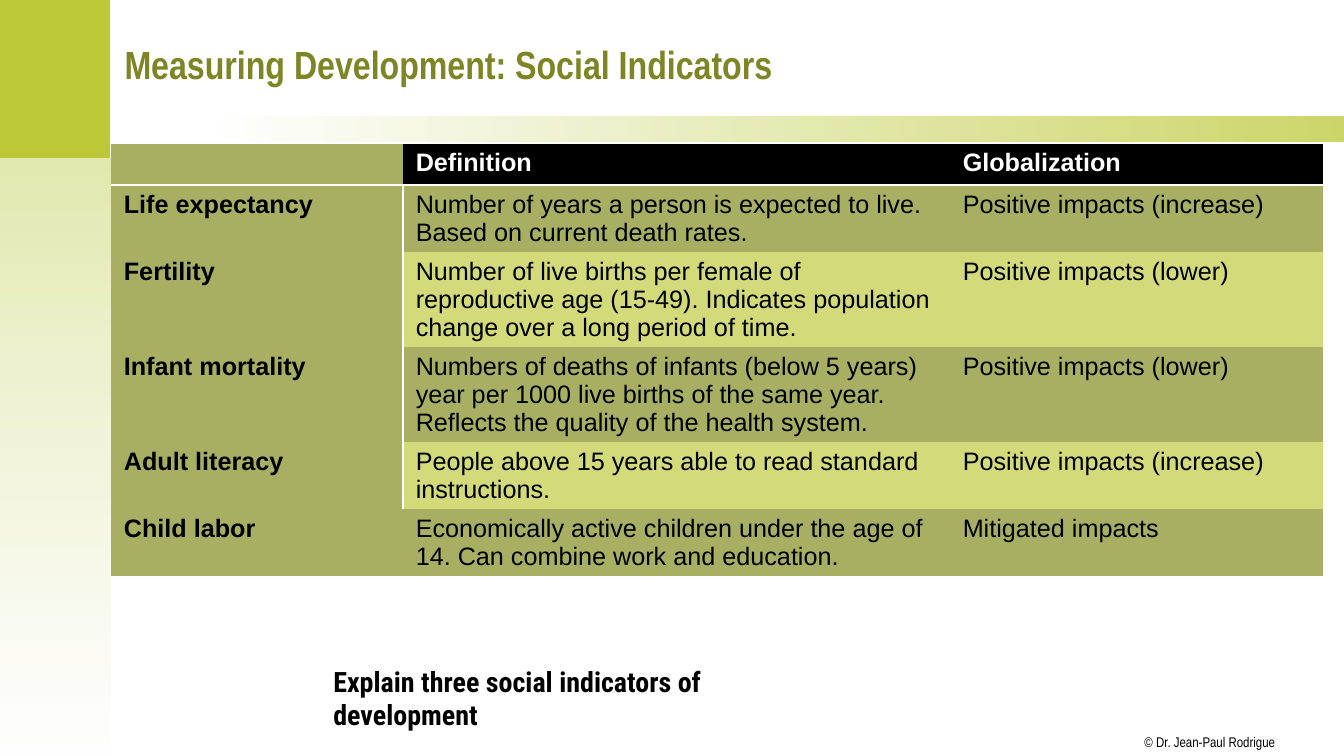
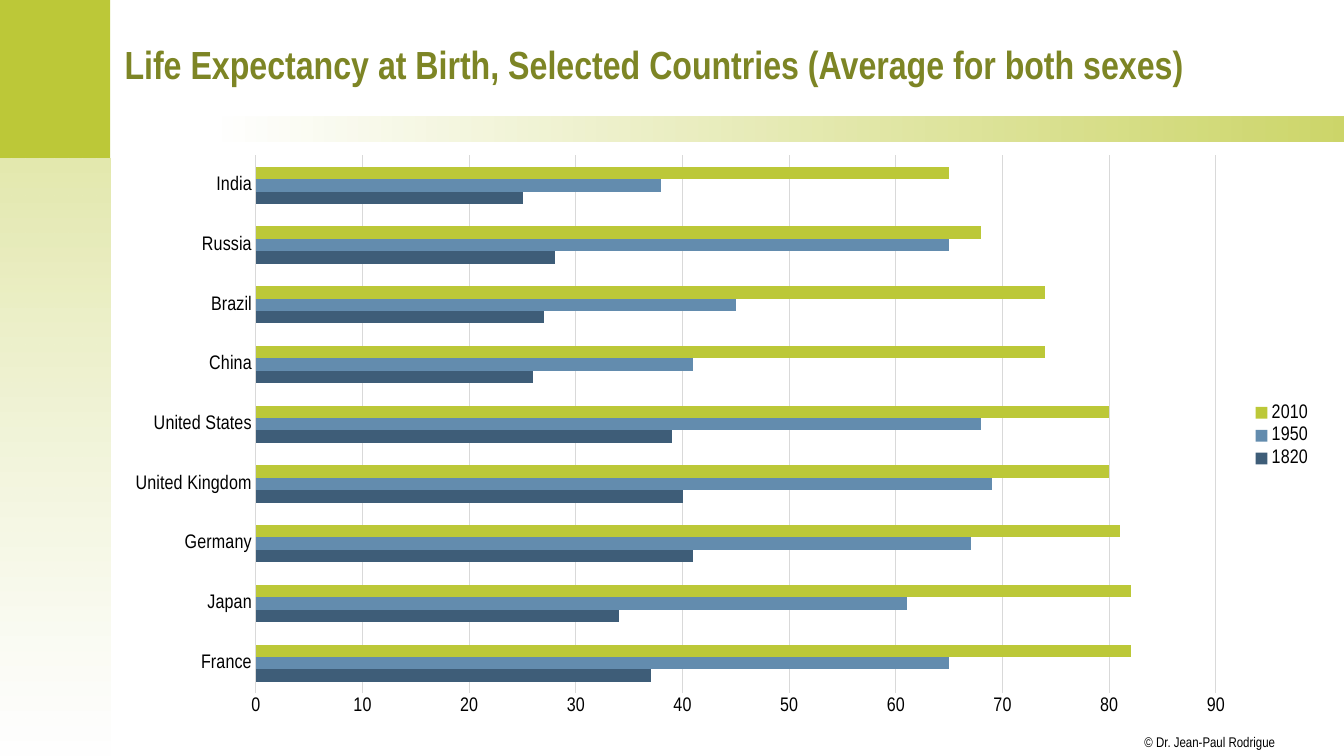
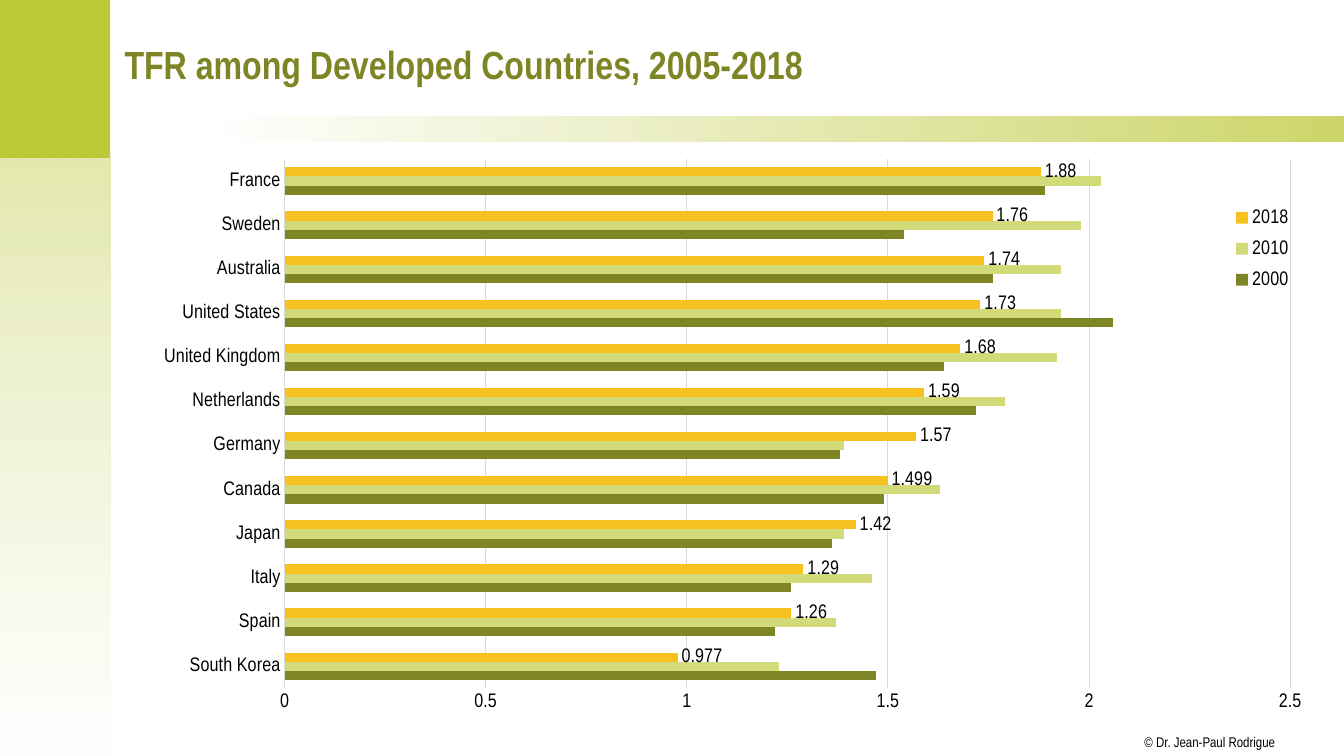
from lxml import etree
from pptx import Presentation
from pptx import util as u
from pptx.chart.data import CategoryChartData
from pptx.dml.color import RGBColor
from pptx.enum import chart as ch, shapes, text
from pptx.oxml import parse_xml
from pptx.oxml.ns import nsdecls, qn

PX = 9525
LIME, OLIVE, SAGE, LEAF = "BCC838", "7D8525", "A8AF62", "D2DA7A"
MINT, NAVY, STEEL, GOLD = "E4E9AF", "3E5D78", "638CAE", "F7C120"
BLACK, WHITE, GREY = "000000", "FFFFFF", "D9D9D9"
NARROW = "Arial Narrow"
BODY = (106, 137, 1154, 556)
PLAIN = "{2D5ABB26-0587-4C30-8999-92F81FD0307C}"

HEADS = ["", "Definition", "Globalization"]
ROWS = [
    ["Life expectancy",
     "Number of years a person is expected to live. Based on current death rates.",
     "Positive impacts (increase)"],
    ["Fertility",
     "Number of live births per female of reproductive age (15-49). "
     "Indicates population change over a long period of time.",
     "Positive impacts (lower)"],
    ["Infant mortality",
     "Numbers of deaths of infants (below 5 years) year per 1000 live births "
     "of the same year. Reflects the quality of the health system.",
     "Positive impacts (lower)"],
    ["Adult literacy",
     "People above 15 years able to read standard instructions.",
     "Positive impacts (increase)"],
    ["Child labor",
     "Economically active children under the age of 14. "
     "Can combine work and education.",
     "Mitigated impacts"],
]

LIFE = {
    "cats": ["France", "Japan", "Germany", "United Kingdom", "United States",
             "China", "Brazil", "Russia", "India"],
    "series": [
        ("1820", NAVY, [37, 34, 41, 40, 39, 26, 27, 28, 25]),
        ("1950", STEEL, [65, 61, 67, 69, 68, 41, 45, 65, 38]),
        ("2010", LIME, [82, 82, 81, 80, 80, 74, 74, 68, 65]),
    ],
    "scale": (90, 10),
}
BIRTHS = {
    "cats": ["South Korea", "Spain", "Italy", "Japan", "Canada", "Germany",
             "Netherlands", "United Kingdom", "United States", "Australia",
             "Sweden", "France"],
    "series": [
        ("2000", OLIVE, [1.47, 1.22, 1.26, 1.36, 1.49, 1.38,
                         1.72, 1.64, 2.06, 1.76, 1.54, 1.89]),
        ("2010", LEAF, [1.23, 1.37, 1.46, 1.39, 1.63, 1.39,
                        1.79, 1.92, 1.93, 1.93, 1.98, 2.03]),
        ("2018", GOLD, [0.977, 1.26, 1.29, 1.42, 1.499, 1.57,
                        1.59, 1.68, 1.73, 1.74, 1.76, 1.88]),
    ],
    "scale": (2.5, 0.5),
}


def px(*vals):
    return [u.Emu(v * PX) for v in vals]


def rgb(code):
    return RGBColor.from_string(code)


def put(obj, **vals):
    for key, val in vals.items():
        setattr(obj, key, val)


def ink(font, size, color=BLACK, name=NARROW, bold=False):
    put(font, size=u.Pt(size), name=name, bold=bold)
    font.color.rgb = rgb(color)


def block(slide, box, color):
    shape = slide.shapes.add_shape(shapes.MSO_SHAPE.RECTANGLE, *px(*box))
    shape.shadow.inherit = False
    shape.line.fill.background()
    shape.fill.solid()
    shape.fill.fore_color.rgb = rgb(color)
    return shape


def fade(slide, box, stops, angle):
    """Add a gradient block; stops are (colour, opacity percent)."""
    shape = block(slide, box, WHITE)
    shape.fill.gradient()
    shape.fill.gradient_angle = angle
    for stop, (color, _) in zip(shape.fill.gradient_stops, stops):
        stop.color.rgb = rgb(color)
    for node, (_, part) in zip(shape._element.iter(qn("a:gs")), stops):
        if part < 100:
            etree.SubElement(node[0], qn("a:alpha"), val=str(part * 1000))
    return shape


def label(slide, box, words, wrap=True, inset=None, **look):
    shape = slide.shapes.add_textbox(*px(*box))
    frame = shape.text_frame
    put(frame, word_wrap=wrap, auto_size=text.MSO_AUTO_SIZE.SHAPE_TO_FIT_TEXT)
    if inset is not None:
        for side in ("left", "right", "top", "bottom"):
            setattr(frame, "margin_" + side, u.Emu(inset * PX))
    run = frame.paragraphs[0].add_run()
    run.text = words
    ink(run.font, **look)
    return shape


def dress(layout, slide):
    """Draw the shared bands and credit, then move them to the layout."""
    parts = [
        block(slide, (-2, -1, 107, 152), LIME),
        fade(slide, (-2, 151, 107, 569), [(MINT, 100), (WHITE, 75)], 270),
        fade(slide, (201, 111, 1080, 24), [(WHITE, 75), (LIME, 75)], 0),
        label(slide, (1090, 699, 126, 16), "© Dr. Jean-Paul Rodrigue",
              wrap=False, inset=0, size=10),
    ]
    for part in parts:
        layout.shapes._spTree.append(part._element)


def head(slide, words):
    title = slide.shapes.title
    left, top, width, height = px(109, 11, 1149, 100)
    put(title, left=left, top=top, width=width, height=height)
    frame = title.text_frame
    put(frame, vertical_anchor=text.MSO_ANCHOR.MIDDLE, word_wrap=True,
        auto_size=text.MSO_AUTO_SIZE.NONE)
    para = frame.paragraphs[0]
    para.alignment = text.PP_ALIGN.LEFT
    run = para.add_run()
    run.text = words
    ink(run.font, 28, OLIVE, bold=True)


def edge(cell, side):
    cell._tc.get_or_add_tcPr().insert(0, parse_xml(
        f'<a:{side} {nsdecls("a")} w="25400"><a:solidFill>'
        f'<a:srgbClr val="{WHITE}"/></a:solidFill></a:{side}>'))


def grid(slide, box):
    left, top, width, _ = box
    rows = [HEADS] + ROWS
    tall = 39
    frame = slide.shapes.add_table(
        len(rows), 3, *px(left, top, width, tall * len(rows)))
    table = frame.table
    put(table, first_row=False, horz_banding=False)
    table._tbl.tblPr.find(qn("a:tableStyleId")).text = PLAIN
    for col, wide in zip(table.columns, px(278, 521, width - 278 - 521)):
        col.width = wide
    for r, row in enumerate(rows):
        table.rows[r].height = u.Emu(tall * PX)
        for c, words in enumerate(row):
            cell = table.cell(r, c)
            side, end = px(12, 5)
            put(cell, margin_left=side, margin_right=side,
                margin_top=end, margin_bottom=end)
            shade = SAGE if c == 0 or r % 2 else LEAF
            if r == 0 and c:
                shade = BLACK
            cell.fill.solid()
            cell.fill.fore_color.rgb = rgb(shade)
            if r == 0:
                edge(cell, "lnB")
            elif c == 0 and r < len(ROWS):
                edge(cell, "lnR")
            if words:
                run = cell.text_frame.paragraphs[0].add_run()
                run.text = words
                ink(run.font, 18, BLACK if r else WHITE, "Arial",
                    bold=r == 0 or c == 0)


def rule(line):
    line.color.rgb = rgb(GREY)
    line.width = u.Pt(0.75)


def bars(slide, box, cats, series, scale):
    data = CategoryChartData()
    data.categories = cats
    for name, _, vals in series:
        data.add_series(name, vals)
    chart = slide.shapes.add_chart(
        ch.XL_CHART_TYPE.BAR_CLUSTERED, *px(*box), data).chart
    put(chart, has_title=False, has_legend=True)
    ink(chart.font, 14)
    plot = chart.plots[0]
    put(plot, gap_width=182, vary_by_categories=False)
    for item, (_, color, _) in zip(plot.series, series):
        item.format.fill.solid()
        item.format.fill.fore_color.rgb = rgb(color)
        item.invert_if_negative = False
    cat, val = chart.category_axis, chart.value_axis
    for axis in (cat, val):
        put(axis, major_tick_mark=ch.XL_TICK_MARK.NONE,
            minor_tick_mark=ch.XL_TICK_MARK.NONE)
        ink(axis.tick_labels.font, 14)
    cat.has_major_gridlines = False
    rule(cat.format.line)
    top, step = scale
    put(val, minimum_scale=0, maximum_scale=top, major_unit=step,
        has_major_gridlines=True)
    val.format.line.fill.background()
    rule(val.major_gridlines.format.line)
    put(chart.legend, position=ch.XL_LEGEND_POSITION.RIGHT,
        include_in_layout=False)
    ink(chart.legend.font, 14)
    return chart


def layout_xml(spot, inner=False):
    """Return a manual layout from left, top, width, height fractions."""
    target = '<c:layoutTarget val="inner"/>' if inner else ""
    sizes = "".join(f'<c:{key} val="{val}"/>' for key, val in zip("xywh", spot))
    return parse_xml(
        f'<c:layout {nsdecls("c")}><c:manualLayout>{target}'
        f'<c:xMode val="edge"/><c:yMode val="edge"/>{sizes}'
        '</c:manualLayout></c:layout>')


def pin(node, spot, inner=False):
    """Replace the layout of a plot area or a legend."""
    for old in node.findall(qn("c:layout")):
        node.remove(old)
    lead = node.find(qn("c:legendPos"))
    node.insert(0 if lead is None else 1, layout_xml(spot, inner))


def births(slide):
    chart = bars(slide, BODY, **BIRTHS)
    chart.legend.position = ch.XL_LEGEND_POSITION.BOTTOM
    pin(chart.legend._element, (0.92, 0.09, 0.06, 0.18))
    area = chart._chartSpace.find(".//" + qn("c:plotArea"))
    pin(area, (0.143, 0.026, 0.83, 0.907), inner=True)
    marks = chart.plots[0].series[2].data_labels
    put(marks, show_value=True, number_format="General",
        number_format_is_linked=False,
        position=ch.XL_LABEL_POSITION.OUTSIDE_END)
    ink(marks.font, 14)


def social(slide):
    grid(slide, BODY)
    label(slide, (308, 628, 471, 42),
          "Explain three social indicators of development",
          size=20, name="Roboto Condensed", bold=True)


def life(slide):
    bars(slide, BODY, **LIFE)


def main():
    deck = Presentation()
    deck.slide_width, deck.slide_height = px(1280, 720)
    layout = deck.slide_layouts[5]
    pages = [
        ("Measuring Development: Social Indicators", social),
        ("Life Expectancy at Birth, Selected Countries "
         "(Average for both sexes)", life),
        ("TFR among Developed Countries, 2005-2018", births),
    ]
    for words, fill in pages:
        slide = deck.slides.add_slide(layout)
        if len(deck.slides) == 1:
            dress(layout, slide)
        head(slide, words)
        fill(slide)
    deck.save("out.pptx")


if __name__ == "__main__":
    main()
